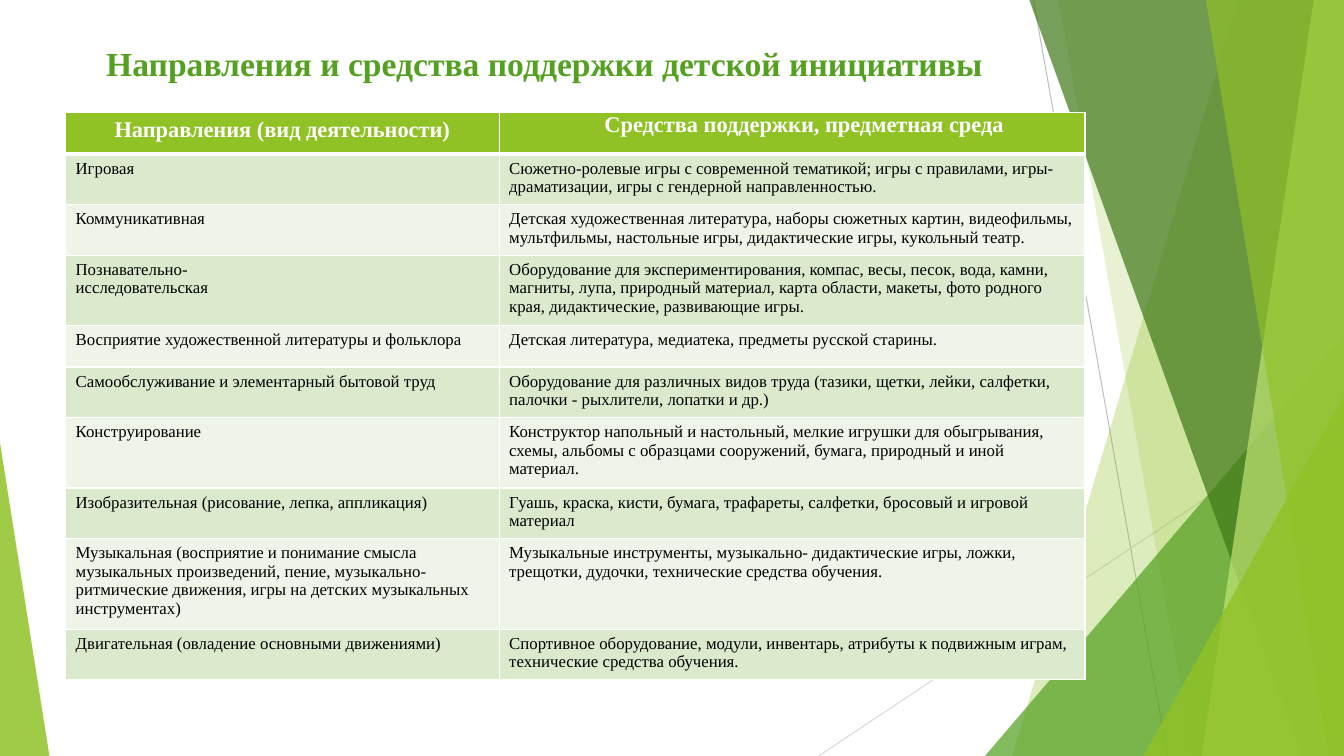
from lxml import etree
from pptx import Presentation
from pptx import util as u
from pptx.dml.color import RGBColor
from pptx.enum import shapes, text
from pptx.oxml import parse_xml
from pptx.oxml.ns import nsdecls, qn

TITLE = "Направления и средства поддержки детской инициативы"
HEADERS = ("Направления (вид деятельности)", "Средства поддержки, предметная среда")
# Each row: lines of text in its taller cell, direction, means of support
ROWS = [
    (2, "Игровая",
     "Сюжетно-ролевые игры с современной тематикой; игры с правилами, игры- "
     "драматизации, игры с гендерной направленностью."),
    (2, "Коммуникативная",
     "Детская художественная литература, наборы сюжетных картин, видеофильмы, "
     "мультфильмы, настольные игры, дидактические игры, кукольный театр."),
    (3, "Познавательно-\nисследовательская",
     "Оборудование для экспериментирования, компас, весы, песок, вода, камни, магниты, лупа, "
     "природный материал, карта области, макеты, фото родного края, дидактические, "
     "развивающие игры."),
    (1, "Восприятие художественной литературы и фольклора",
     "Детская литература, медиатека, предметы русской старины."),
    (2, "Самообслуживание и элементарный бытовой труд",
     "Оборудование для различных видов труда (тазики, щетки, лейки, салфетки, "
     "палочки - рыхлители, лопатки и др.)"),
    (3, "Конструирование",
     "Конструктор напольный и настольный, мелкие игрушки для обыгрывания, схемы, альбомы "
     "с образцами сооружений, бумага, природный и иной материал."),
    (2, "Изобразительная (рисование, лепка, аппликация)",
     "Гуашь, краска, кисти, бумага, трафареты, салфетки, бросовый и игровой материал"),
    (4, "Музыкальная (восприятие и понимание смысла музыкальных произведений, пение, "
        "музыкально- ритмические движения, игры на детских музыкальных инструментах)",
     "Музыкальные инструменты, музыкально- дидактические игры, ложки, трещотки, дудочки, "
     "технические средства обучения."),
    (2, "Двигательная (овладение основными движениями)",
     "Спортивное оборудование, модули, инвентарь, атрибуты к подвижным играм, "
     "технические средства обучения."),
]
LIME, GREEN, WHITE, BLACK = "90C226", "54A021", "FFFFFF", "000000"
BANDS = ("DBE9CD", "EEF4E8")


def color(value):
    return RGBColor.from_string(value)


class Page:
    """One slide; lengths are percentages of its width and height."""
    font = "Times New Roman"

    def __init__(self, deck):
        self.width, self.height = deck.slide_width, deck.slide_height
        self.slide = deck.slides.add_slide(deck.slide_layouts[6])
        self.shapes = self.slide.shapes

    def x(self, share):
        return round(self.width * share / 100)

    def y(self, share):
        return round(self.height * share / 100)

    def line(self, start, end, tint):
        line = self.shapes.add_connector(
            shapes.MSO_CONNECTOR.STRAIGHT, self.x(start[0]), self.y(start[1]),
            self.x(end[0]), self.y(end[1]))
        line.line.color.rgb = color(tint)
        line.line.width = u.Pt(0.75)
        etree.SubElement(line._element.spPr, qn("a:effectLst"))

    def paint(self, shape, tint, opacity):
        shape.shadow.inherit = False
        shape.line.fill.background()
        shape.fill.solid()
        shape.fill.fore_color.rgb = color(tint)
        tone = shape.fill._xPr.find(".//" + qn("a:srgbClr"))
        etree.SubElement(tone, qn("a:alpha"), val=str(opacity * 1000))

    def facet(self, top, bottom, tint, opacity):
        """Full-height area from a slanted left edge to the right side of the slide."""
        outline = self.shapes.build_freeform(self.x(top), 0)
        corners = [(100, 0), (100, 100), (bottom, 100)]
        outline.add_line_segments([(self.x(a), self.y(b)) for a, b in corners])
        self.paint(outline.convert_to_shape(), tint, opacity)

    def corner(self, left, top, width, apex, tint, opacity):
        """Triangle that stands on the bottom edge of the slide."""
        shape = self.shapes.add_shape(
            shapes.MSO_SHAPE.ISOSCELES_TRIANGLE, self.x(left), self.y(top),
            self.x(width), self.y(100 - top))
        shape.adjustments[0] = apex
        self.paint(shape, tint, opacity)

    def put_text(self, frame, words, size, tint, bold=False, align=text.PP_ALIGN.LEFT):
        frame.text = words
        frame.word_wrap = True
        for para in frame.paragraphs:
            para.alignment = align
            for span in para.runs:
                span.font.name, span.font.size = self.font, u.Pt(size)
                span.font.bold, span.font.color.rgb = bold, color(tint)

    def title(self, left, top, width, height, words):
        box = self.shapes.add_textbox(self.x(left), self.y(top), self.x(width), self.y(height))
        self.put_text(box.text_frame, words, 24, GREEN, True, text.PP_ALIGN.CENTER)

    def borders(self, cell, bottom):
        properties = cell._tc.get_or_add_tcPr()
        widths = (("lnL", 1), ("lnR", 1), ("lnT", 1), ("lnB", bottom))
        for index, (side, points) in enumerate(widths):
            properties.insert(index, parse_xml(
                f'<a:{side} {nsdecls("a")} w="{u.Pt(points)}"><a:solidFill>'
                f'<a:srgbClr val="{WHITE}"/></a:solidFill></a:{side}>'))

    def fill_cell(self, cell, tint, bottom=1):
        cell.fill.solid()
        cell.fill.fore_color.rgb = color(tint)
        self.borders(cell, bottom)

    def table(self, left, top, columns, headers, rows):
        heights = [5.47] + [max(5.47, 1.33 + 2.46 * lines) for lines, *_ in rows]
        table = self.shapes.add_table(
            len(heights), len(columns), self.x(left), self.y(top),
            self.x(sum(columns)), self.y(sum(heights))).table
        for column, width in zip(table.columns, columns):
            column.width = self.x(width)
        for row, height in zip(table.rows, heights):
            row.height = self.y(height)
        for index, words in enumerate(headers):
            cell = table.cell(0, index)
            self.put_text(cell.text_frame, words, 16, WHITE, True, text.PP_ALIGN.CENTER)
            self.fill_cell(cell, LIME, 3)
        cell.margin_left = u.Inches(0.24)
        cell.margin_top = cell.margin_right = cell.margin_bottom = 0
        for number, (_, *entries) in enumerate(rows):
            for index, words in enumerate(entries):
                cell = table.cell(number + 1, index)
                self.put_text(cell.text_frame, words, 12, BLACK)
                self.fill_cell(cell, BANDS[number % 2])


def main():
    deck = Presentation()
    deck.slide_width, deck.slide_height = u.Inches(13.33), u.Inches(7.5)
    page = Page(deck)
    page.line((76.9, 0), (86.87, 100), "BFBFBF")
    page.line((100, 53.73), (60.92, 100), "D9D9D9")
    page.facet(92.12, 75.32, LIME, 30)
    page.facet(78.77, 88.75, LIME, 20)
    page.corner(73.29, 44.4, 26.71, 1, GREEN, 72)
    page.facet(76.59, 96.85, "3F7819", 70)
    page.facet(97.75, 89.42, "C0E474", 70)
    page.facet(89.72, 98.87, LIME, 65)
    page.corner(85.07, 52.4, 14.93, 1, LIME, 80)
    page.corner(0, 58.53, 3.68, 0, LIME, 85)
    page.title(5.25, 5, 70.5, 12, TITLE)
    page.table(4.88, 14.93, (32.26, 43.59), HEADERS, ROWS)
    deck.save("out.pptx")


if __name__ == "__main__":
    main()
